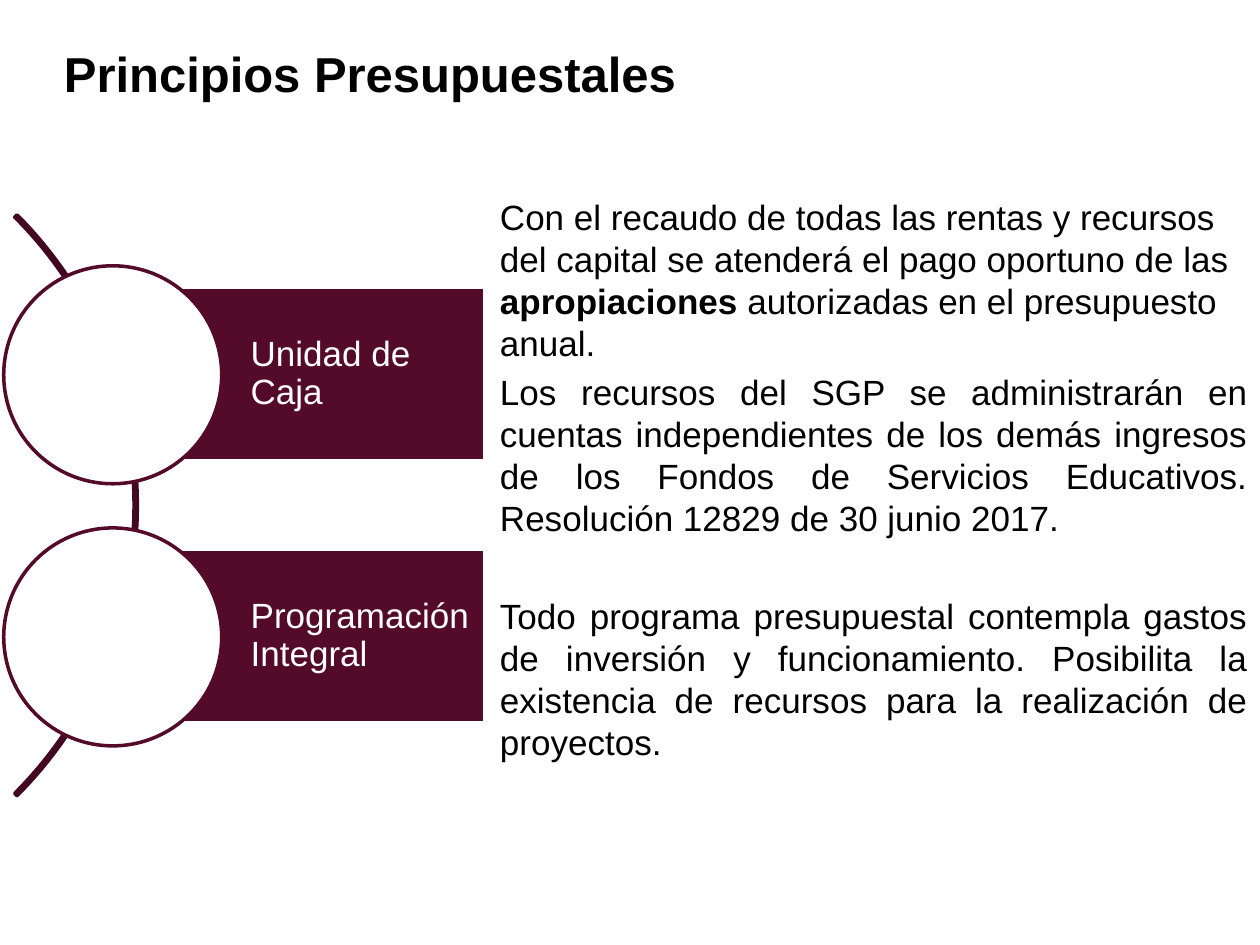
from pptx import Presentation
from pptx.dml.color import RGBColor
from pptx.enum import shapes, text
from pptx.util import Inches, Pt

WINE, DARK_WINE, WHITE, BLACK = "540A29", "430821", "FFFFFF", "000000"


def color(value):
    return RGBColor.from_string(value)


def add_shape(kind, left, top, width, height, fill, line):
    shape = slide.shapes.add_shape(
        kind, Inches(left), Inches(top), Inches(width), Inches(height))
    shape.shadow.inherit = False
    if fill:
        shape.fill.solid()
        shape.fill.fore_color.rgb = color(fill)
    else:
        shape.fill.background()
    shape.line.color.rgb = color(line)
    shape.line.width = Pt(2)
    return shape


presentation = Presentation()
presentation.slide_width, presentation.slide_height = Inches(10), Inches(7.5)
slide = presentation.slides.add_slide(presentation.slide_layouts[6])

# Title
title = slide.shapes.add_textbox(Inches(0.41), Inches(0.13), Inches(9), Inches(0.9))
frame = title.text_frame
frame.word_wrap = True
frame.vertical_anchor = text.MSO_ANCHOR.MIDDLE
frame.text = "Principios Presupuestales"
font = frame.paragraphs[0].runs[0].font
font.name, font.size, font.bold = "Arial", Pt(28), True
font.color.rgb = color(BLACK)

# Explanations: alignment, space before in points, runs (every second one bold)
explanations = [
    (text.PP_ALIGN.LEFT, 0, [
        "Con el recaudo de todas las rentas y recursos del capital se atenderá "
        "el pago oportuno de las ",
        "apropiaciones",
        " autorizadas en el presupuesto anual."]),
    (text.PP_ALIGN.JUSTIFY, 4, [
        "Los recursos del SGP se administrarán en cuentas independientes de los "
        "demás ingresos de los Fondos de Servicios Educativos. "
        "Resolución 12829 de 30 junio 2017."]),
    (text.PP_ALIGN.JUSTIFY, 32, [
        "Todo programa presupuestal contempla gastos de inversión y "
        "funcionamiento. Posibilita la existencia de recursos para la "
        "realización de proyectos."]),
]
body = slide.shapes.add_textbox(Inches(3.87), Inches(1.5), Inches(6.13), Inches(4.68))
frame = body.text_frame
frame.word_wrap = True
for number, (alignment, space, parts) in enumerate(explanations):
    paragraph = frame.add_paragraph() if number else frame.paragraphs[0]
    paragraph.alignment = alignment
    if space:
        paragraph.space_before = Pt(space)
    for index, part in enumerate(parts):
        run = paragraph.add_run()
        run.text = part
        run.font.name, run.font.size = "Arial", Pt(20)
        run.font.bold = index % 2 == 1
        run.font.color.rgb = color(BLACK)

# Arc behind the principles, from -45 to 45 degrees
arc = add_shape(shapes.MSO_SHAPE.BLOCK_ARC, -5.43, 0.75, 6.52, 6.52, None, DARK_WINE)
for index, value in enumerate((189, 27, 0.004)):
    arc.adjustments[index] = value

# Principles: a bar with its name and a circle centred on the bar's left edge
for number, name in enumerate(("Unidad de Caja", "Programación Integral")):
    top = 2.11 + 2.08 * number
    bar = add_shape(shapes.MSO_SHAPE.RECTANGLE, 0.89, top + 0.17, 2.96, 1.38, WINE, WHITE)
    frame = bar.text_frame
    frame.word_wrap = True
    frame.vertical_anchor = text.MSO_ANCHOR.MIDDLE
    frame.margin_left = Inches(1.1)
    frame.margin_top = frame.margin_right = frame.margin_bottom = Inches(0.06)
    frame.text = name
    paragraph = frame.paragraphs[0]
    paragraph.alignment = text.PP_ALIGN.LEFT
    paragraph.line_spacing = 0.9
    font = paragraph.runs[0].font
    font.name, font.size = "Arial", Pt(20)
    font.color.rgb = color(WHITE)
    add_shape(shapes.MSO_SHAPE.OVAL, 0.03, top, 1.73, 1.73, WHITE, WINE)

presentation.save("out.pptx")
